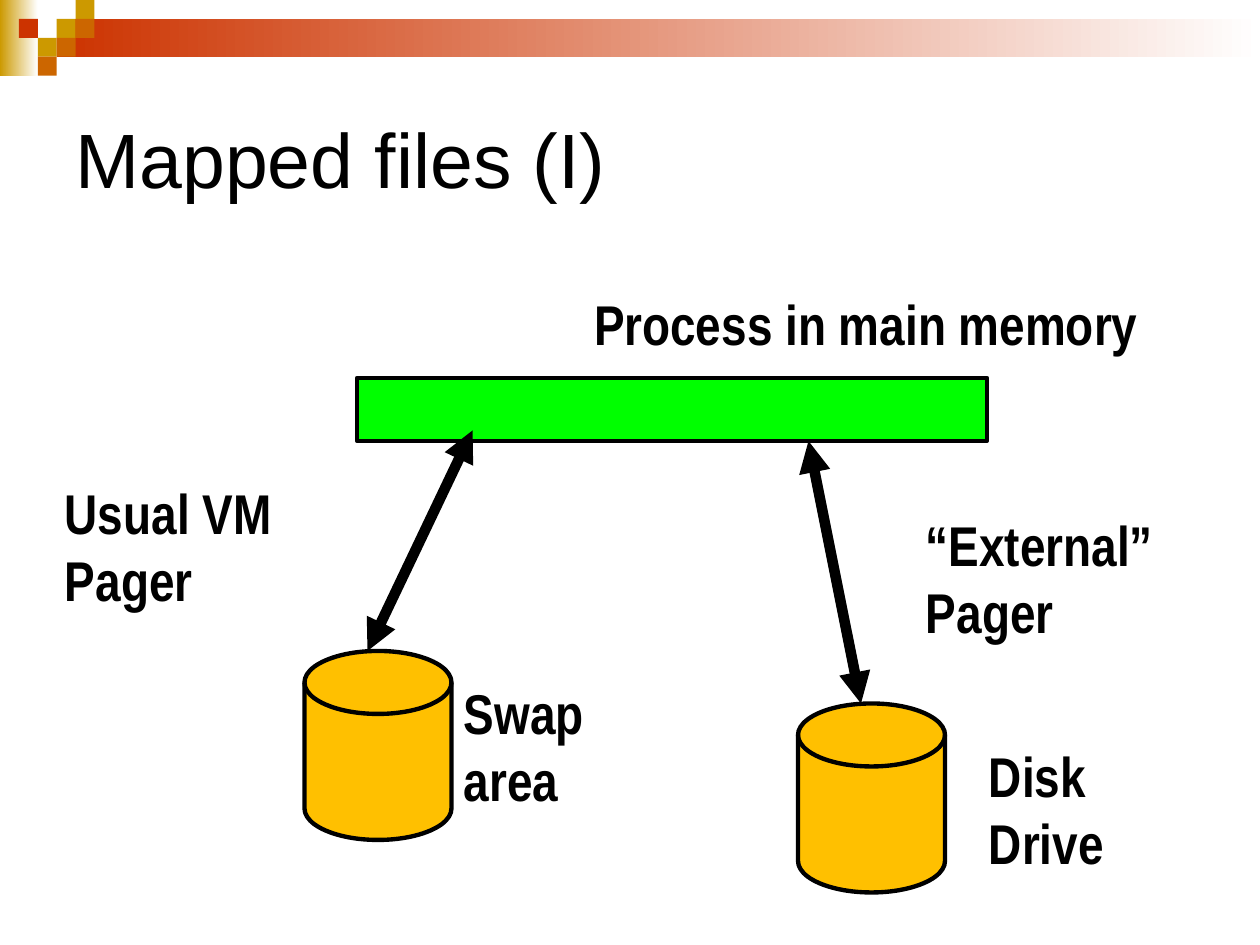
from lxml import etree
from pptx import Presentation
from pptx.dml.color import RGBColor
from pptx.enum.shapes import MSO_CONNECTOR, MSO_SHAPE
from pptx.enum.text import MSO_ANCHOR, PP_ALIGN
from pptx.oxml.ns import qn
from pptx.util import Inches, Pt

RECTANGLE = MSO_SHAPE.RECTANGLE
DISK = MSO_SHAPE.FLOWCHART_MAGNETIC_DISK
STRAIGHT = MSO_CONNECTOR.STRAIGHT
TOP, MIDDLE = MSO_ANCHOR.TOP, MSO_ANCHOR.MIDDLE
LEFT, CENTER = PP_ALIGN.LEFT, PP_ALIGN.CENTER

BLACK = RGBColor(0x00, 0x00, 0x00)
WHITE = RGBColor(0xFF, 0xFF, 0xFF)
GOLD = RGBColor(0xCC, 0x99, 0x00)
ORANGE = RGBColor(0xCC, 0x66, 0x00)
RED = RGBColor(0xCC, 0x33, 0x00)
GREEN = RGBColor(0x00, 0xFF, 0x00)
AMBER = RGBColor(0xFF, 0xC0, 0x00)

COLUMNS, ROWS = 120, 90
CELL = Inches(10) // COLUMNS


def cells(*counts):
    return [round(count * CELL) for count in counts]


def add_block(page, kind, box, color, fade=None, outline=None):
    block = page.shapes.add_shape(kind, *cells(*box))
    block.shadow.inherit = False
    if fade is None:
        block.fill.solid()
        block.fill.fore_color.rgb = color
    else:
        block.fill.gradient()
        block.fill.gradient_angle = 0
        for stop, shade in zip(block.fill.gradient_stops, (color, fade)):
            stop.color.rgb = shade
    if outline is None:
        block.line.fill.background()
    else:
        block.line.color.rgb = outline
        block.line.width = Pt(2.5)


def add_text(page, box, lines, font, size, bold=False, align=LEFT, anchor=TOP):
    frame = page.shapes.add_textbox(*cells(*box)).text_frame
    frame.word_wrap = True
    frame.vertical_anchor = anchor
    for index, line in enumerate(lines):
        para = frame.add_paragraph() if index else frame.paragraphs[0]
        para.alignment = align
        span = para.add_run()
        span.text = line
        span.font.name = font
        span.font.size = Pt(size)
        span.font.bold = bold
        span.font.color.rgb = BLACK


def add_label(page, box, lines, align=LEFT):
    add_text(page, box, lines, "Arial Narrow", 32, True, align)


def add_double_arrow(page, start, end):
    arrow = page.shapes.add_connector(STRAIGHT, *cells(*start, *end))
    arrow.line.color.rgb = BLACK
    arrow.line.width = Pt(6)
    stroke = arrow.line._get_or_add_ln()
    for tip in ("a:headEnd", "a:tailEnd"):
        etree.SubElement(stroke, qn(tip)).set("type", "triangle")
    etree.SubElement(arrow._element.spPr, qn("a:effectLst"))


def add_banner(page, box):
    left, top, width, height = box
    tile = height / 4
    add_block(page, RECTANGLE, (left, top, 2 * tile, height), GOLD, WHITE)
    add_block(page, RECTANGLE,
              (left + 3 * tile, top + tile, width - 3 * tile, 2 * tile), RED, WHITE)
    tiles = [(3, 1, GOLD), (4, 0, GOLD), (4, 1, ORANGE), (2, 2, GOLD),
             (1, 1, RED), (3, 2, ORANGE), (2, 3, ORANGE)]
    for column, row, color in tiles:
        add_block(page, RECTANGLE,
                  (left + column * tile, top + row * tile, tile, tile), color)


def add_title(page, box):
    add_text(page, box, ["Mapped files (I)"], "Arial", 44, anchor=MIDDLE)


def add_process(page, box):
    left, top, width, height = box
    add_block(page, RECTANGLE, box, GREEN, outline=BLACK)
    add_label(page, (left + 19, top - 9, width - 1, 7.5),
              ["Process in main memory"], CENTER)


def add_store(page, box, lines, label_offset):
    left, top, width, height = box
    across, down = label_offset
    add_block(page, DISK, box, AMBER, outline=BLACK)
    add_label(page, (left + across, top + down, width + 2, 14), lines)


def add_pager(page, start, end, label_box, lines):
    add_double_arrow(page, start, end)
    add_label(page, label_box, lines)


def main():
    deck = Presentation()
    deck.slide_width = COLUMNS * CELL
    deck.slide_height = ROWS * CELL
    page = deck.slides.add_slide(deck.slide_layouts[6])
    add_banner(page, (0, 0, COLUMNS, 7.2))
    add_title(page, (6, 6, 108, 18))
    add_process(page, (34, 36, 60, 6))
    add_pager(page, (45, 41), (35, 62), (5, 45, 27, 14), ["Usual VM", "Pager"])
    add_pager(page, (77, 42), (82, 67), (87, 48, 27, 14), ["“External”", "Pager"])
    add_store(page, (29, 62, 14, 18), ["Swap", "area"], (14, 2))
    add_store(page, (76, 67, 14, 18), ["Disk", "Drive"], (17, 3))
    deck.save("out.pptx")


if __name__ == "__main__":
    main()
